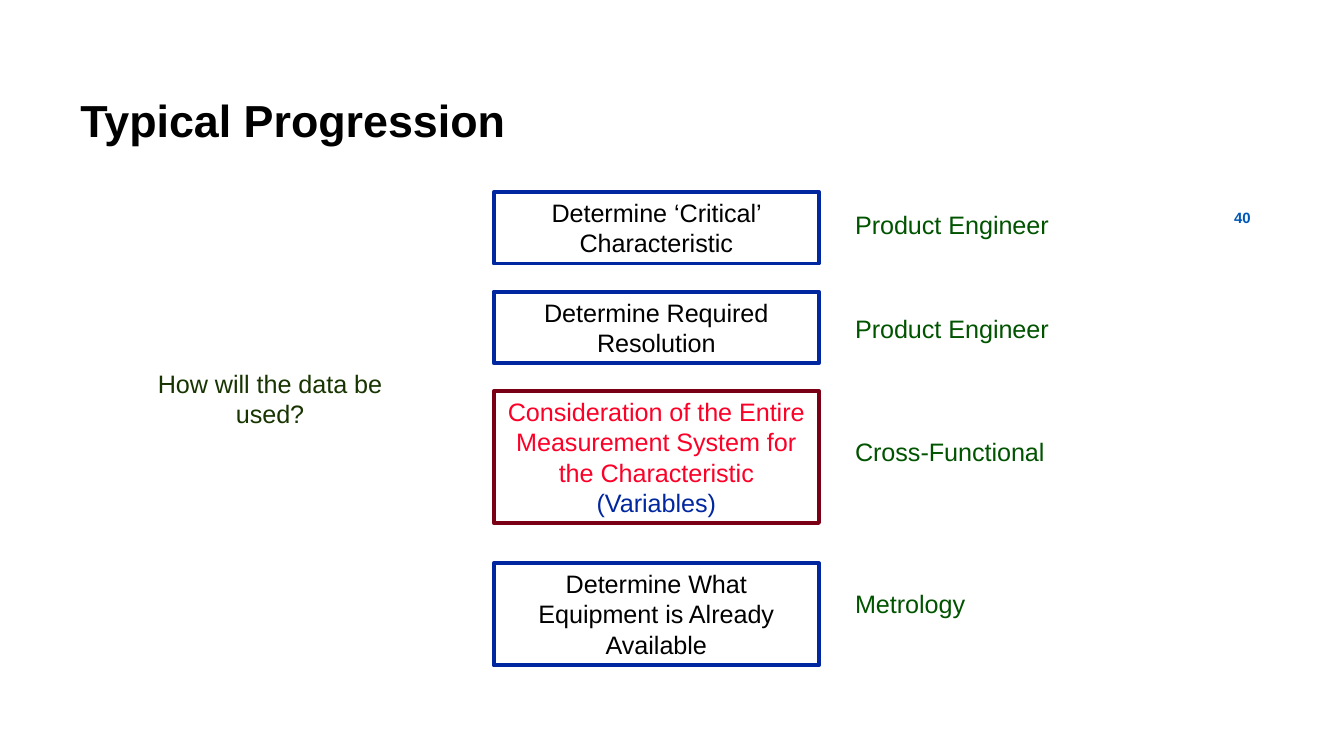
"""Build the 'Typical Progression' slide: four steps with their owners."""
from pptx import Presentation
from pptx.dml.color import RGBColor
from pptx.enum.shapes import MSO_SHAPE as SHAPE
from pptx.enum.text import MSO_ANCHOR as ANCHOR, PP_ALIGN as ALIGN
from pptx.util import Cm, Pt

BLACK, BLUE, RED, MAROON = "000000", "00279F", "FC0128", "790015"
GREEN, DARK_GREEN, PAGE_BLUE = "005400", "183400", "0057B8"
INSETS = (0.18, 0.1)

STEPS = [
    ([("Determine ‘Critical’ Characteristic", BLACK)], BLUE, 3.63, 1.35),
    ([("Determine Required Resolution", BLACK)], BLUE, 5.51, 1.35),
    ([("Consideration of the Entire Measurement System for the Characteristic", RED),
      ("(Variables)", BLUE)], MAROON, 7.39, 2.49),
    ([("Determine What Equipment is Already Available", BLACK)], BLUE, 10.64, 1.93),
]
OWNERS = [
    ("Product Engineer", 3.86, 4.09),
    ("Product Engineer", 5.82, 4.09),
    ("Cross-Functional", 8.15, 4.01),
    ("Metrology", 11.02, 2.49),
]
STEP_LEFT, STEP_WIDTH = 9.33, 6.15
OWNER_LEFT, OWNER_HEIGHT = 15.98, 0.76


def rgb(color):
    return RGBColor.from_string(color)


def write(sp, lines, size=13.5, bold=False, align=ALIGN.LEFT, anchor=ANCHOR.TOP,
          insets=INSETS, wrap=True):
    tf = sp.text_frame
    tf.word_wrap = wrap
    tf.vertical_anchor = anchor
    tf.margin_left = tf.margin_right = Cm(insets[0])
    tf.margin_top = tf.margin_bottom = Cm(insets[1])
    tf.text = "\n".join(text for text, _ in lines)
    for p, (_, color) in zip(tf.paragraphs, lines):
        p.alignment = align
        for r in p.runs:
            r.font.name = "Arial"
            r.font.size = Pt(size)
            r.font.bold = bold
            r.font.color.rgb = rgb(color)


def add_text(s, box, text, color, **style):
    write(s.shapes.add_textbox(*map(Cm, box)), [(text, color)], **style)


def add_step(s, lines, border, top, height):
    sp = s.shapes.add_shape(SHAPE.RECTANGLE, *map(Cm, (STEP_LEFT, top, STEP_WIDTH, height)))
    sp.shadow.inherit = False
    sp.fill.background()
    sp.line.color.rgb = rgb(border)
    sp.line.width = Pt(2)
    write(sp, lines, align=ALIGN.CENTER)


def main():
    prs = Presentation()
    prs.slide_width, prs.slide_height = Cm(25.4), Cm(14.28)
    s = prs.slides.add_slide(prs.slide_layouts[6])

    add_text(s, (1.27, 1.27, 21.21, 1.98), "Typical Progression", BLACK, size=24,
             bold=True, anchor=ANCHOR.MIDDLE, insets=(0.25, 0.13))
    for step in STEPS:
        add_step(s, *step)
    for owner, top, width in OWNERS:
        add_text(s, (OWNER_LEFT, top, width, OWNER_HEIGHT), owner, GREEN, wrap=False)
    add_text(s, (2.31, 6.86, 5.59, 1.35), "How will the data be used?", DARK_GREEN,
             align=ALIGN.CENTER)
    add_text(s, (22.83, 3.94, 1.3, 0.33), "40", PAGE_BLUE, size=8, bold=True,
             align=ALIGN.CENTER, anchor=ANCHOR.MIDDLE, insets=(0.25, 0.13))
    prs.save("out.pptx")


if __name__ == "__main__":
    main()
